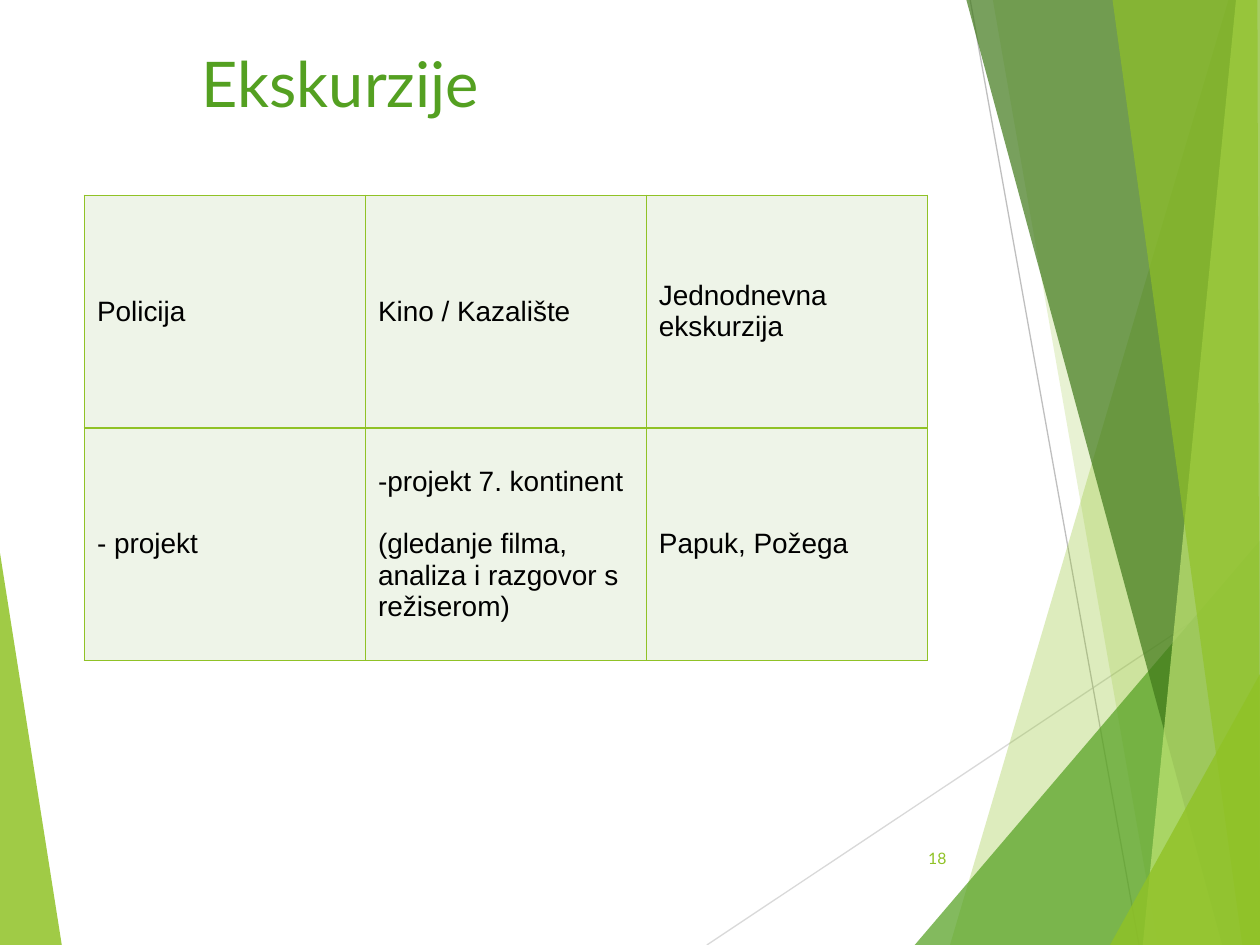
from dataclasses import dataclass

from lxml import etree
from pptx import Presentation
from pptx import util as u
from pptx.dml.color import RGBColor
from pptx.enum import shapes, text
from pptx.oxml import ns

W, H = u.Inches(10), u.Inches(7.5)
GREEN, DARK_GREEN, MINT = "90C226", "54A021", "EEF4E8"
ANCHOR, ALIGN = text.MSO_ANCHOR, text.PP_ALIGN


@dataclass
class Facet:
    """A translucent polygon; points are in percent of the slide's size."""
    color: str
    opacity: int
    points: list[tuple[float, float]]


@dataclass
class Ray:
    color: str
    start: tuple[float, float]
    end: tuple[float, float]


LEFT_FACET = Facet(GREEN, 85, [(0, 58.53), (4.9, 100), (0, 100)])
RAYS = [
    Ray("D9D9D9", (56.1, 100), (100.1, 60.93)),
    Ray("BFBFBF", (77, 0), (90.4, 100)),
]
RIGHT_FACETS = [
    Facet(GREEN, 30, [(97.5, 0), (75.4, 100), (100, 100), (100, 0)]),
    Facet(GREEN, 20, [(78.8, 0), (91.9, 100), (100, 100), (100, 0)]),
    Facet(DARK_GREEN, 72, [(72.6, 100), (100, 57.2), (100, 100)]),
    Facet("3F7819", 70, [(76.7, 0), (97, 100), (100, 100), (100, 0)]),
    Facet("C0E474", 70, [(98.1, 0), (90.7, 100), (100, 100), (100, 0)]),
    Facet(GREEN, 65, [(88.3, 0), (98.6, 100), (100, 100), (99.8, 0)]),
    Facet(GREEN, 80, [(88.1, 100), (100, 71.33), (100, 100)]),
]

# Each cell is a list of paragraphs; "\n" marks a line break
ROWS = [
    [["Policija"], ["Kino / Kazalište"], ["Jednodnevna \nekskurzija"]],
    [["- projekt"],
     ["-projekt 7. kontinent",
      "(gledanje filma, analiza i razgovor s režiserom)"],
     ["Papuk, Požega"]],
]


def rgb(color: str) -> RGBColor:
    return RGBColor.from_string(color)


def at(x: float, y: float) -> tuple[int, int]:
    return round(W * x / 100), round(H * y / 100)


def sub(parent, tag: str, **attrs: str):
    return etree.SubElement(parent, ns.qn(tag), **attrs)


def draw_facet(s, facet: Facet) -> None:
    first, *rest = [at(*p) for p in facet.points]
    builder = s.shapes.build_freeform(*first)
    builder.add_line_segments(rest, close=True)
    sp = builder.convert_to_shape()
    sp.shadow.inherit = False
    sp.fill.solid()
    sp.fill.fore_color.rgb = rgb(facet.color)
    sp.line.fill.background()
    color = sp._element.spPr.find(".//" + ns.qn("a:srgbClr"))
    sub(color, "a:alpha", val=str(facet.opacity * 1000))


def draw_ray(s, ray: Ray) -> None:
    line = s.shapes.add_connector(
        shapes.MSO_CONNECTOR.STRAIGHT, *at(*ray.start), *at(*ray.end))
    line.line.color.rgb = rgb(ray.color)
    line.line.width = u.Pt(0.75)
    sub(line._element.spPr, "a:effectLst")


def add_run(p, words: str, size: float, font: str, color: str) -> None:
    for i, part in enumerate(words.split("\n")):
        if i:
            p.add_line_break()
        r = p.add_run()
        r.text = part
        r.font.size, r.font.name = u.Pt(size), font
        r.font.color.rgb = rgb(color)


def border_cell(cell) -> None:
    tc_pr = cell._tc.get_or_add_tcPr()
    for i, side in enumerate(("a:lnL", "a:lnR", "a:lnT", "a:lnB")):
        ln = etree.Element(ns.qn(side), w=str(u.Pt(1)))
        sub(sub(ln, "a:solidFill"), "a:srgbClr", val=GREEN)
        tc_pr.insert(i, ln)  # borders come before the fill


def draw_table(s) -> None:
    frame = s.shapes.add_table(len(ROWS), len(ROWS[0]),
                               *at(6.7, 20.67), *at(66.9, 49.2))
    table = frame.table
    table.first_row = table.horz_banding = False
    for i, row in enumerate(ROWS):
        for j, paragraphs in enumerate(row):
            cell = table.cell(i, j)
            cell.fill.solid()
            cell.fill.fore_color.rgb = rgb(MINT)
            cell.vertical_anchor = ANCHOR.MIDDLE
            border_cell(cell)
            tf = cell.text_frame
            for k, words in enumerate(paragraphs):
                p = tf.add_paragraph() if k else tf.paragraphs[0]
                if k:
                    p.space_before = u.Pt(18)
                add_run(p, words, 16, "Arial", "000000")


def draw_title(s) -> None:
    title = s.shapes.title
    title.left, title.top = at(15, 4)
    title.width, title.height = at(85, 16.67)
    tf = title.text_frame
    tf.vertical_anchor = ANCHOR.TOP
    p = tf.paragraphs[0]
    p.alignment = ALIGN.LEFT
    add_run(p, "Ekskurzije", 36, "Lato", DARK_GREEN)


def draw_page_number(s) -> None:
    tf = s.shapes.add_textbox(*at(70.5, 88.13), *at(5.6, 5.33)).text_frame
    tf.word_wrap = True
    tf.vertical_anchor = ANCHOR.MIDDLE
    p = tf.paragraphs[0]
    p.alignment = ALIGN.RIGHT
    add_run(p, "18", 9, "Lato", GREEN)


def main() -> None:
    prs = Presentation()
    prs.slide_width, prs.slide_height = W, H
    s = prs.slides.add_slide(prs.slide_layouts[5])  # title only

    # Decoration
    draw_facet(s, LEFT_FACET)
    for ray in RAYS:
        draw_ray(s, ray)
    for facet in RIGHT_FACETS:
        draw_facet(s, facet)

    # Content
    draw_page_number(s)
    draw_title(s)
    draw_table(s)
    prs.save("out.pptx")


if __name__ == "__main__":
    main()
